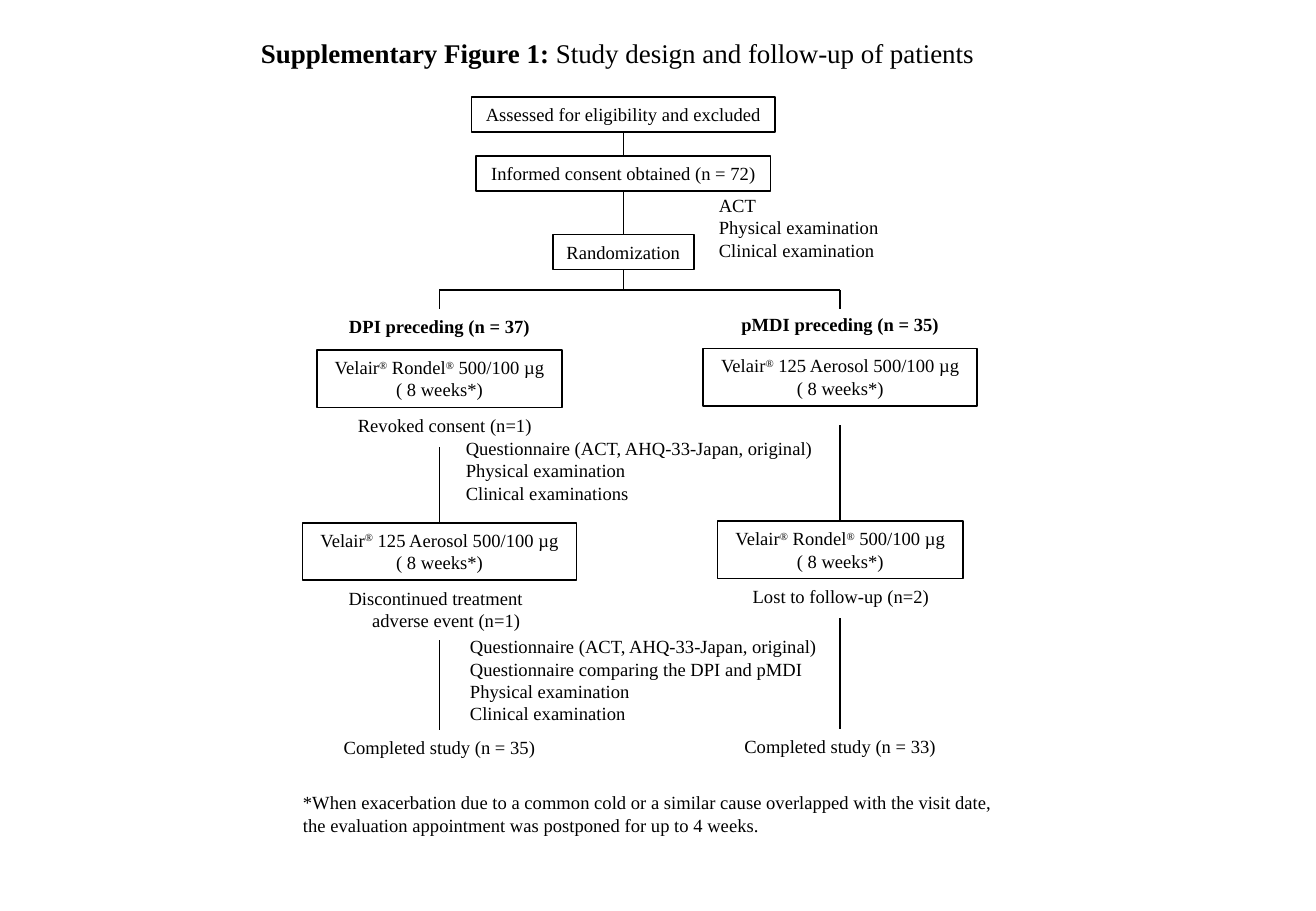
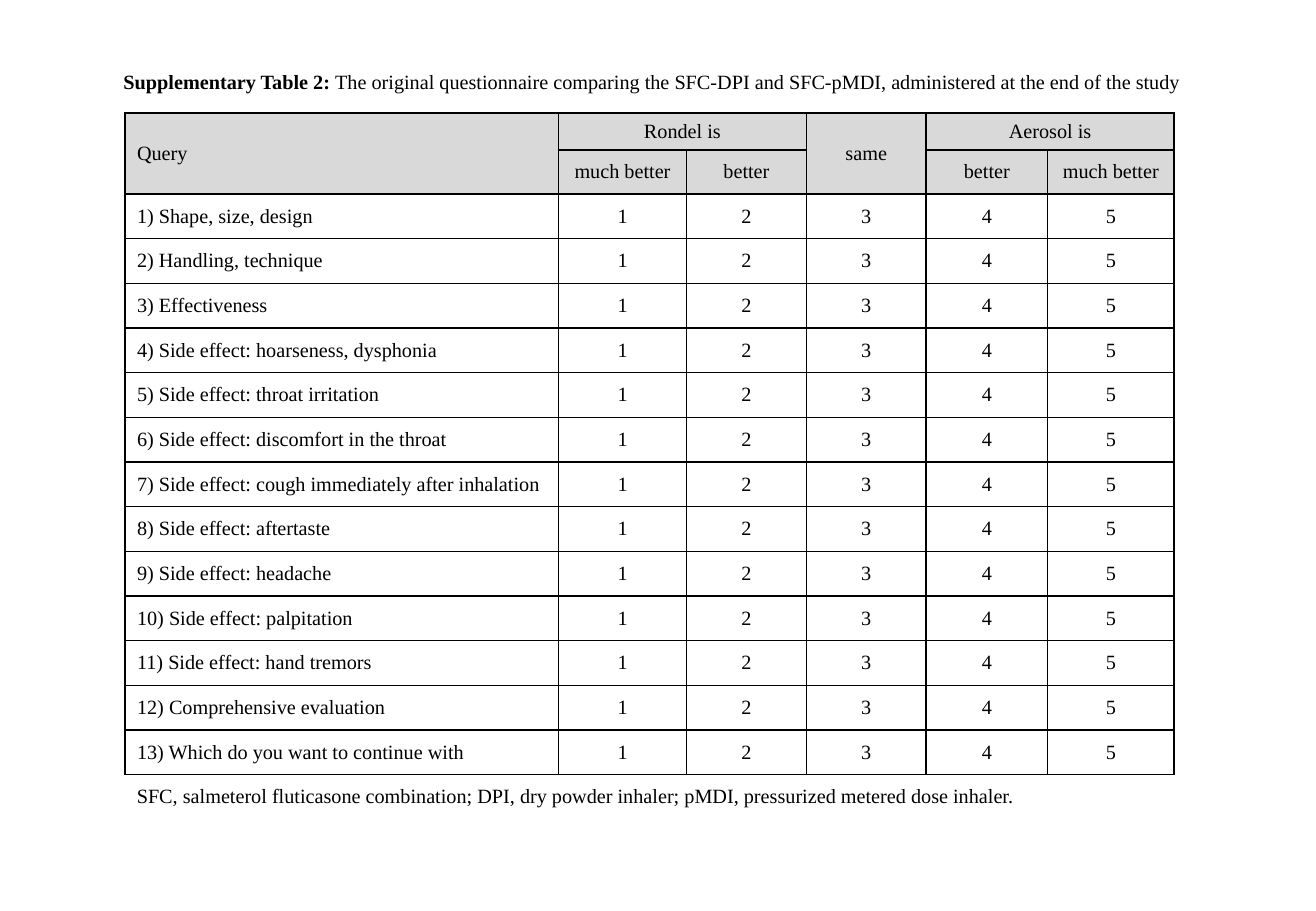
from dataclasses import dataclass

import pptx
import pptx.dml.color
import pptx.enum.shapes
import pptx.enum.text
import pptx.oxml
import pptx.oxml.ns
import pptx.util

Pt = pptx.util.Pt
ALIGN = pptx.enum.text.PP_ALIGN
ANCHOR = pptx.enum.text.MSO_ANCHOR


@dataclass(frozen=True)
class Theme:
    font: str = "Times New Roman"
    ink: pptx.dml.color.RGBColor = pptx.dml.color.RGBColor(0, 0, 0)
    header: pptx.dml.color.RGBColor = pptx.dml.color.RGBColor(0xD9, 0xD9, 0xD9)
    line: float = 1
    figure_title: float = 16
    table_text: float = 12
    flow_text: float = 11


T = Theme()
PITCH = 13.2  # height of one line of flow text
PAD = 7.6  # top and bottom insets of a flow box together


# Shared helpers
def write(p, text, size, align=ALIGN.LEFT, bold=False):
    """Fill a paragraph, raising every registered sign."""
    p.alignment = align
    f = p.font
    f.name, f.size, f.bold = T.font, Pt(size), bold
    f.color.rgb = T.ink
    for i, part in enumerate(text.split("®")):
        if i:
            r = p.add_run()
            r.text = "®"
            r.font._element.set("baseline", "30000")
        if part:
            p.add_run().text = part


def fill_lines(tf, lines, size, align=ALIGN.LEFT, bold=False):
    for i, text in enumerate(lines):
        p = tf.paragraphs[0] if i == 0 else tf.add_paragraph()
        write(p, text, size, align, bold)


def add_title(s, box, label, text, size):
    sp = s.shapes.title
    sp.left, sp.top, sp.width, sp.height = (Pt(v) for v in box)
    tf = sp.text_frame
    tf.auto_size = pptx.enum.text.MSO_AUTO_SIZE.NONE
    tf.word_wrap = True
    tf.vertical_anchor = ANCHOR.TOP
    p = tf.paragraphs[0]
    write(p, label, size)
    p.runs[0].font.bold = True
    p.add_run().text = text


def add_text(s, x, y, w, lines, size=T.flow_text):
    sp = s.shapes.add_textbox(Pt(x), Pt(y), Pt(w), Pt(PAD + PITCH * len(lines)))
    sp.text_frame.word_wrap = True
    fill_lines(sp.text_frame, lines, size)
    return sp


def add_box(s, axis, y, w, lines, framed=True, bold=False):
    """Centred text on a vertical axis, with or without a frame."""
    sp = s.shapes.add_shape(
        pptx.enum.shapes.MSO_SHAPE.RECTANGLE,
        Pt(axis - w / 2), Pt(y), Pt(w), Pt(PAD + PITCH * len(lines)))
    sp.shadow.inherit = False
    sp.fill.background()
    if framed:
        sp.line.color.rgb = T.ink
        sp.line.width = Pt(T.line)
    else:
        sp.line.fill.background()
    tf = sp.text_frame
    tf.word_wrap = False
    tf.vertical_anchor = ANCHOR.TOP
    fill_lines(tf, lines, T.flow_text, ALIGN.CENTER, bold)


def add_line(s, x1, y1, x2, y2):
    c = s.shapes.add_connector(
        pptx.enum.shapes.MSO_CONNECTOR.STRAIGHT, Pt(x1), Pt(y1), Pt(x2), Pt(y2))
    c.line.color.rgb = T.ink
    c.line.width = Pt(T.line)
    pptx.oxml.ns.qn("a:effectLst")
    c._element.spPr.append(
        c._element.spPr.makeelement(pptx.oxml.ns.qn("a:effectLst"), {}))


# Slide 1: flow chart
DPI = (145.5, ["Velair® Rondel® 500/100 µg", "( 8 weeks*)"])
PMDI = (162.5, ["Velair® 125 Aerosol 500/100 µg", "( 8 weeks*)"])
LEFT_AXIS, MID_AXIS, RIGHT_AXIS = 260.5, 369.5, 498


def add_enrolment(s, axis, top):
    add_box(s, axis, top, 180, ["Assessed for eligibility and excluded"])
    add_box(s, axis, top + 35, 174.5, ["Informed consent obtained (n = 72)"])
    add_box(s, axis, top + 81.5, 83.5, ["Randomization"])
    add_line(s, axis, top + 21, axis, top + 35)
    add_line(s, axis, top + 56, axis, top + 81.5)
    add_line(s, axis, top + 102.5, axis, top + 114.5)
    add_text(s, axis + 49.5, top + 54, 130,
             ["ACT", "Physical examination", "Clinical examination"])


def add_split(s, left, right, y):
    add_line(s, left, y, right, y)
    for x in (left, right):
        add_line(s, x, y, x, y + 11)


def add_arm(s, axis, top, heading, periods, losses, completed):
    """One study arm: each period is a treatment, its losses and a line."""
    add_box(s, axis, top, 130, [heading], framed=False, bold=True)
    stops = (24.5, 127, 250)
    for (w, treatment), (dx, lost), y, end in zip(periods, losses, stops, stops[1:]):
        add_box(s, axis, top + y, w, treatment)
        if lost:
            sp = add_text(s, axis + dx, top + y + 34.5, 140, lost)
            for p in sp.text_frame.paragraphs[1:]:
                p._p.get_or_add_pPr().set("marL", str(Pt(14)))
        add_line(s, axis, top + y + 45.5 + 12 * len(lost), axis, top + end)
    add_box(s, axis, top + stops[-1], 130, [completed], framed=False)


def build_flow_slide(prs):
    s = prs.slides.add_slide(prs.slide_layouts[5])
    add_title(s, (147.5, 18, 444, 27), "Supplementary Figure 1:",
              " Study design and follow-up of patients", T.figure_title)
    add_enrolment(s, MID_AXIS, 57.5)
    add_split(s, LEFT_AXIS, RIGHT_AXIS, 172)
    add_arm(s, LEFT_AXIS, 183, "DPI preceding (n = 37)", (DPI, PMDI),
            ((-55.5, ["Revoked consent (n=1)"]),
             (-61, ["Discontinued treatment", "adverse event (n=1)"])),
            "Completed study (n = 35)")
    add_arm(s, RIGHT_AXIS, 182, "pMDI preceding (n = 35)", (PMDI, DPI),
            ((0, []), (-59, ["Lost to follow-up (n=2)"])),
            "Completed study (n = 33)")

    # Examinations between the arms
    survey = "Questionnaire (ACT, AHQ-33-Japan, original)"
    add_text(s, 269, 255.5, 230,
             [survey, "Physical examination", "Clinical examinations"])
    add_text(s, 271.5, 373, 230,
             [survey, "Questionnaire comparing the DPI and pMDI",
              "Physical examination", "Clinical examination"])

    # Footnote
    add_text(s, 172.5, 465.5, 428.5,
             ["*When exacerbation due to a common cold or a similar cause "
              "overlapped with the visit date, the evaluation appointment was "
              "postponed for up to 4 weeks."])


# Slide 2: questionnaire
HEADER = (("Query", "Rondel is", "", "same", "Aerosol is", ""),
          ("", "much better", "better", "", "better", "much better"))
MERGES = ((0, 0, 1, 0), (0, 1, 0, 2), (0, 3, 1, 3), (0, 4, 0, 5))
QUERIES = (
    "Shape, size, design",
    "Handling, technique",
    "Effectiveness",
    "Side effect: hoarseness, dysphonia",
    "Side effect: throat irritation",
    "Side effect: discomfort in the throat",
    "Side effect: cough immediately after inhalation",
    "Side effect: aftertaste",
    "Side effect: headache",
    "Side effect: palpitation",
    "Side effect: hand tremors",
    "Comprehensive evaluation",
    "Which do you want to continue with",
)
COL_WIDTHS = (257, 76, 71, 71, 72, 75)
HEADER_HEIGHTS, ROW_HEIGHT = (22, 26), 26.5


def set_borders(cell):
    tcPr = cell._tc.get_or_add_tcPr()
    for side in "LRTB":
        tcPr.append(pptx.oxml.parse_xml(
            f'<a:ln{side} {pptx.oxml.ns.nsdecls("a")} w="{Pt(T.line)}">'
            f'<a:solidFill><a:srgbClr val="{T.ink}"/></a:solidFill></a:ln{side}>'))


def add_questionnaire(s, x, y):
    rows = list(HEADER) + [
        (f"{n}) {query}", "1", "2", "3", "4", "5")
        for n, query in enumerate(QUERIES, 1)]
    heights = HEADER_HEIGHTS + (ROW_HEIGHT,) * len(QUERIES)
    tbl = s.shapes.add_table(
        len(rows), len(COL_WIDTHS), Pt(x), Pt(y),
        Pt(sum(COL_WIDTHS)), Pt(sum(heights))).table
    tbl.first_row = tbl.horz_banding = False
    for col, w in zip(tbl.columns, COL_WIDTHS):
        col.width = Pt(w)
    for i, (values, h) in enumerate(zip(rows, heights)):
        tbl.rows[i].height = Pt(h)
        for j, text in enumerate(values):
            cell = tbl.cell(i, j)
            set_borders(cell)
            if i < len(HEADER):
                cell.fill.solid()
                cell.fill.fore_color.rgb = T.header
            else:
                cell.fill.background()
            cell.vertical_anchor = ANCHOR.MIDDLE
            write(cell.text_frame.paragraphs[0], text, T.table_text,
                  ALIGN.CENTER if j else ALIGN.LEFT)
    for r1, c1, r2, c2 in MERGES:
        tbl.cell(r1, c1).merge(tbl.cell(r2, c2))


def build_table_slide(prs):
    s = prs.slides.add_slide(prs.slide_layouts[5])
    add_title(s, (66, 37.5, 660, 22), "Supplementary Table 2:",
              " The original questionnaire comparing the SFC-DPI and SFC-pMDI, "
              "administered at the end of the study", T.table_text)
    add_questionnaire(s, 74, 67)
    add_text(s, 74, 461, 560,
             ["SFC, salmeterol fluticasone combination; DPI, dry powder inhaler; "
              "pMDI, pressurized metered dose inhaler."], T.table_text)


def main():
    prs = pptx.Presentation()
    prs.slide_width, prs.slide_height = Pt(780), Pt(540)
    build_flow_slide(prs)
    build_table_slide(prs)
    prs.save("out.pptx")


if __name__ == "__main__":
    main()
